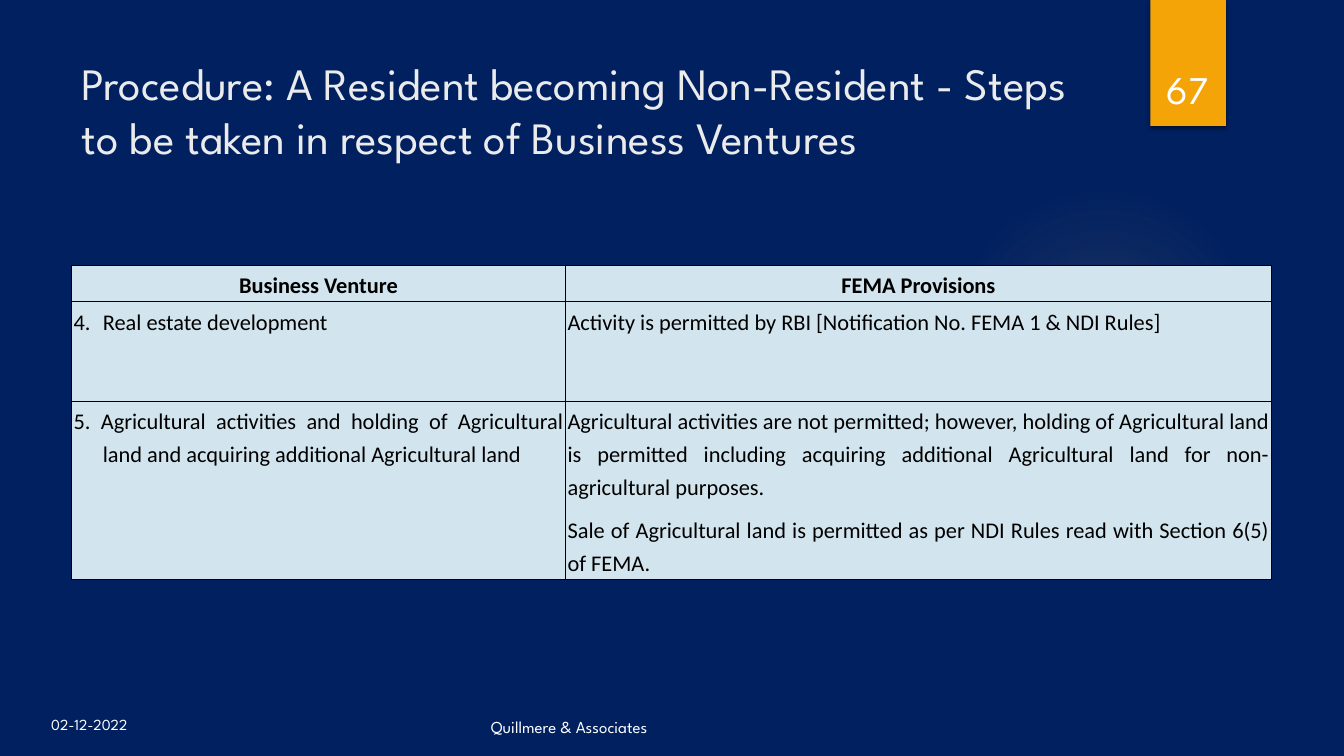
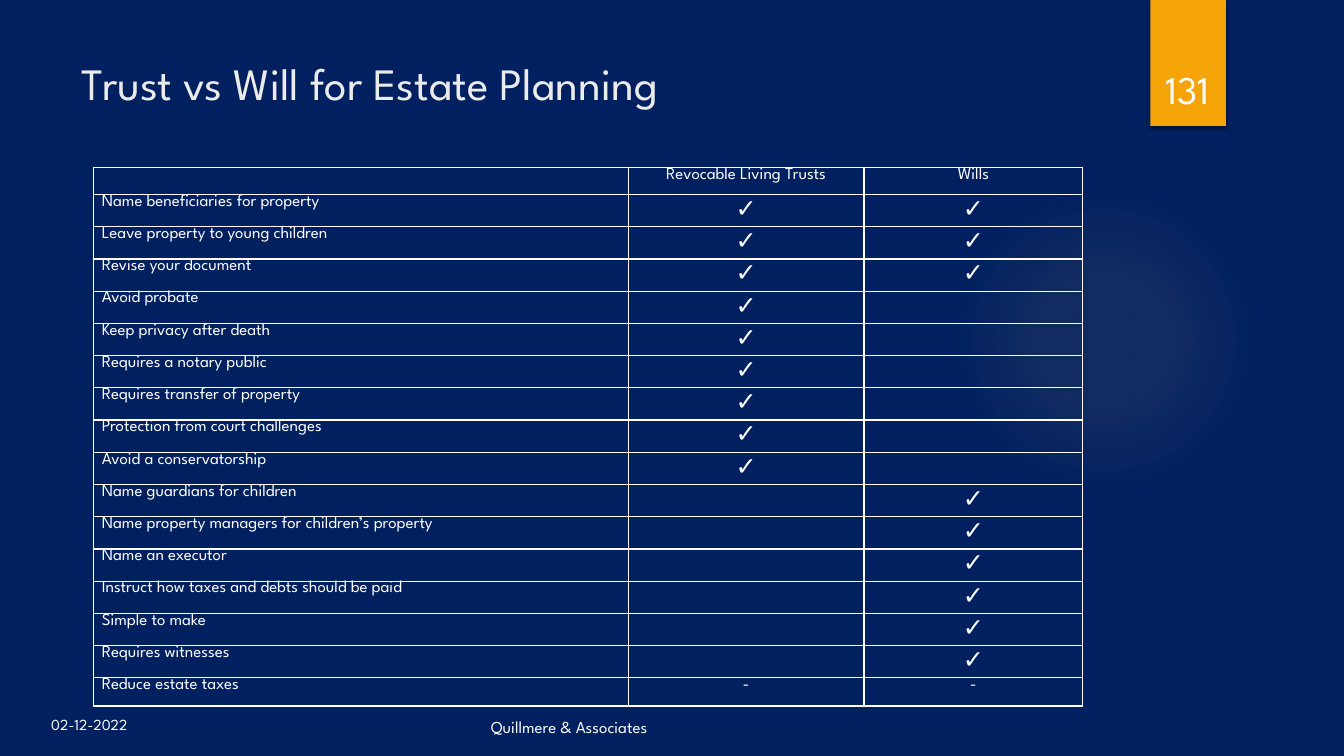
"""Build two dark slides on business ventures and estate planning."""
from dataclasses import dataclass

from lxml.etree import SubElement
from pptx import Presentation
from pptx.dml.color import RGBColor
from pptx.enum.shapes import MSO_SHAPE
from pptx.enum.text import MSO_ANCHOR, MSO_AUTO_SIZE, PP_ALIGN
from pptx.oxml import parse_xml
from pptx.oxml.ns import nsdecls, qn
from pptx.util import Inches, Pt


@dataclass(frozen=True)
class Style:
    """Font, size, colour and weight of a piece of text."""
    font: str
    size: int
    color: str
    bold: bool = False


@dataclass(frozen=True)
class Theme:
    """Colours and text styles that the slides share."""
    background: str = "002060"
    ribbon: str = "F5A408"
    glow: str = "FAC96A"
    pale: str = "D2E4ED"
    black: str = "000000"
    white: str = "FFFFFF"
    title: Style = Style("League Spartan", 32, "EBEBEB")
    number: Style = Style("League Spartan", 28, "FFFFFF")
    date: Style = Style("League Spartan", 11, "FFFFFF")
    footer: Style = Style("League Spartan", 12, "FFFFFF")
    label: Style = Style("League Spartan", 12, "FFFFFF")
    check: Style = Style("Arial", 18, "FFFFFF", True)
    heading: Style = Style("Calibri", 16, "000000", True)
    body: Style = Style("Calibri", 16, "000000")


THEME = Theme()
DATE = "02-12-2022"
FIRM = "Quillmere & Associates"
CHECK = "✓"

PROVISIONS = [
    ("Business Venture", "FEMA Provisions"),
    ("4.\tReal estate development",
     "Activity is permitted by RBI [Notification No. FEMA 1 & NDI Rules]"),
    ("5. Agricultural activities and holding of Agricultural land and "
     "acquiring additional Agricultural land",
     "Agricultural activities are not permitted; however, holding of "
     "Agricultural land is permitted including acquiring additional "
     "Agricultural land for non-agricultural purposes.\n"
     "Sale of Agricultural land is permitted as per NDI Rules read with "
     "Section 6(5) of FEMA."),
]

COMPARISON = [
    ("", "Revocable Living Trusts", "Wills"),
    ("Name beneficiaries for property", CHECK, CHECK),
    ("Leave property to young children", CHECK, CHECK),
    ("Revise your document", CHECK, CHECK),
    ("Avoid probate", CHECK, ""),
    ("Keep privacy after death", CHECK, ""),
    ("Requires a notary public", CHECK, ""),
    ("Requires transfer of property", CHECK, ""),
    ("Protection from court challenges", CHECK, ""),
    ("Avoid a conservatorship", CHECK, ""),
    ("Name guardians for children", "", CHECK),
    ("Name property managers for children’s property", "", CHECK),
    ("Name an executor", "", CHECK),
    ("Instruct how taxes and debts should be paid", "", CHECK),
    ("Simple to make", "", CHECK),
    ("Requires witnesses", "", CHECK),
    ("Reduce estate taxes", "-", "-"),
]


def rgb(color):
    """Turn a hex string into a colour."""
    return RGBColor.from_string(color)


def write(frame, text, style, align=PP_ALIGN.LEFT):
    """Fill a text frame and format its paragraphs and runs."""
    frame.text = text
    for paragraph in frame.paragraphs:
        paragraph.alignment = align
        for run in paragraph.runs:
            run.font.name = style.font
            run.font.size = Pt(style.size)
            run.font.bold = style.bold
            run.font.color.rgb = rgb(style.color)
        if not paragraph.runs:
            SubElement(paragraph._p, qn("a:endParaRPr"), sz=str(style.size * 100))


def add_label(slide, box, text, style, align=PP_ALIGN.LEFT, anchor=MSO_ANCHOR.TOP):
    """Add a wrapped text box."""
    frame = slide.shapes.add_textbox(*map(Inches, box)).text_frame
    frame.word_wrap = True
    frame.vertical_anchor = anchor
    write(frame, text, style, align)


def add_plain_shape(slide, kind, box):
    """Add a preset shape without line or shadow."""
    shape = slide.shapes.add_shape(kind, *map(Inches, box))
    shape.shadow.inherit = False
    shape.line.fill.background()
    return shape


def add_glow(slide):
    """Add the faint round glow."""
    glow = add_plain_shape(slide, MSO_SHAPE.OVAL, (9.41, 1.83, 3.08, 3.08))
    glow.fill.background()
    stops = "".join(
        f'<a:gs pos="{position * 1000}"><a:srgbClr val="{THEME.glow}">'
        f'<a:alpha val="{opacity * 1000}"/></a:srgbClr></a:gs>'
        for position, opacity in ((0, 7), (36, 6), (69, 0)))
    gradient = parse_xml(
        f'<a:gradFill {nsdecls("a")}><a:gsLst>{stops}</a:gsLst><a:path path="circle">'
        '<a:fillToRect l="50000" t="50000" r="50000" b="50000"/></a:path></a:gradFill>')
    properties = glow.element.spPr
    properties.replace(properties.find(qn("a:noFill")), gradient)
    return glow


def add_ribbon(slide):
    """Add the ribbon behind the slide number."""
    ribbon = add_plain_shape(slide, MSO_SHAPE.RECTANGLE, (11.41, 0, 0.75, 1.25))
    ribbon.fill.solid()
    ribbon.fill.fore_color.rgb = rgb(THEME.ribbon)
    ribbon.element.spPr.find(qn("a:effectLst")).append(parse_xml(
        f'<a:outerShdw {nsdecls("a")} blurRad="{Pt(3)}" dist="{Pt(2)}" dir="5400000">'
        f'<a:srgbClr val="{THEME.black}"><a:alpha val="45000"/></a:srgbClr></a:outerShdw>'))
    return ribbon


def decorate(slide):
    """Move the glow and the ribbon to the layout that the slides share."""
    layout = slide.slide_layout
    for shape_id, add in enumerate((add_glow, add_ribbon), 20):
        element = add(slide).element
        element.nvSpPr.cNvPr.set("id", str(shape_id))
        layout.shapes.element.append(element)


def add_slide(deck, title, number):
    """Add a slide with its title, number, date and footer."""
    slide = deck.slides.add_slide(deck.slide_layouts.get_by_name("Title Only"))
    heading = slide.shapes.title
    heading.left, heading.top, heading.width, heading.height = map(
        Inches, (0.71, 0.5, 10.29, 1.53))
    frame = heading.text_frame
    frame.word_wrap = True
    frame.auto_size = MSO_AUTO_SIZE.NONE
    frame.vertical_anchor = MSO_ANCHOR.TOP
    write(frame, title, THEME.title)
    add_label(slide, (11.32, 0.32, 0.92, 0.84), number, THEME.number,
              PP_ALIGN.CENTER, MSO_ANCHOR.BOTTOM)
    add_label(slide, (0.41, 7.05, 1.08, 0.33), DATE, THEME.date)
    add_label(slide, (4.77, 7.03, 4.22, 0.33), FIRM, THEME.footer,
              anchor=MSO_ANCHOR.BOTTOM)
    return slide


def set_borders(cell, color):
    """Draw a one-point line on each side of a cell."""
    properties = cell._tc.get_or_add_tcPr()
    for place, side in enumerate("LRTB"):
        properties.insert(place, parse_xml(
            f'<a:ln{side} {nsdecls("a")} w="{Pt(1)}"><a:solidFill>'
            f'<a:srgbClr val="{color}"/></a:solidFill></a:ln{side}>'))


def add_grid(slide, corner, widths, heights, border, inset, fill=None):
    """Add an empty table with borders, insets and fill."""
    left, top = corner
    table = slide.shapes.add_table(
        len(heights), len(widths),
        *map(Inches, (left, top, sum(widths), sum(heights)))).table
    table.first_row = table.horz_banding = False
    for column, width in zip(table.columns, widths):
        column.width = Inches(width)
    for row, height in zip(table.rows, heights):
        row.height = Inches(height)
    for cell in table.iter_cells():
        cell.margin_left = cell.margin_right = Inches(inset)
        cell.margin_top = cell.margin_bottom = Inches(inset)
        if fill:
            cell.fill.solid()
            cell.fill.fore_color.rgb = rgb(fill)
        else:
            cell.fill.background()
        set_borders(cell, border)
    return table


def hang(paragraph, indent):
    """Give a numbered paragraph a hanging indent with a tab stop."""
    properties = paragraph._p.get_or_add_pPr()
    properties.set("marL", str(Inches(indent)))
    properties.set("indent", str(-Inches(indent)))
    tabs = SubElement(properties, qn("a:tabLst"))
    SubElement(tabs, qn("a:tab"), pos=str(Inches(indent)), algn="l")


def add_provisions(slide):
    """Add the table of ventures and provisions."""
    table = add_grid(slide, (0.71, 2.63), (4.9, 7), (0.36, 0.99, 1.77),
                     THEME.black, 0.02, THEME.pale)
    for row, texts in enumerate(PROVISIONS):
        for column, text in enumerate(texts):
            frame = table.cell(row, column).text_frame
            if row == 0:
                write(frame, text, THEME.heading, PP_ALIGN.CENTER)
            else:
                write(frame, text, THEME.body, PP_ALIGN.JUSTIFY)
            for paragraph in frame.paragraphs:
                paragraph.line_spacing = 1.2
                paragraph.space_after = Pt(7.2)
                if row > 0 and column == 0:
                    hang(paragraph, 0.29)


def add_comparison(slide):
    """Add the check list of trusts and wills."""
    heights = [0.27] + [0.32] * (len(COMPARISON) - 2) + [0.28]
    table = add_grid(slide, (0.93, 1.66), (5.3, 2.34, 2.17), heights, THEME.white, 0)
    for row, texts in enumerate(COMPARISON):
        table.cell(row, 0).margin_left = Inches(0.08)
        for column, text in enumerate(texts):
            write(table.cell(row, column).text_frame, text,
                  THEME.check if text == CHECK else THEME.label,
                  PP_ALIGN.CENTER if column else PP_ALIGN.LEFT)


def main():
    """Build and save the deck."""
    deck = Presentation()
    deck.slide_width, deck.slide_height = Inches(13.33), Inches(7.5)
    backdrop = deck.slide_master.background.fill
    backdrop.solid()
    backdrop.fore_color.rgb = rgb(THEME.background)

    ventures = add_slide(
        deck, "Procedure: A Resident becoming Non-Resident - Steps to be taken "
        "in respect of Business Ventures", "67")
    decorate(ventures)
    add_provisions(ventures)
    add_comparison(add_slide(deck, "Trust vs Will for Estate Planning", "131"))
    deck.save("out.pptx")


if __name__ == "__main__":
    main()
